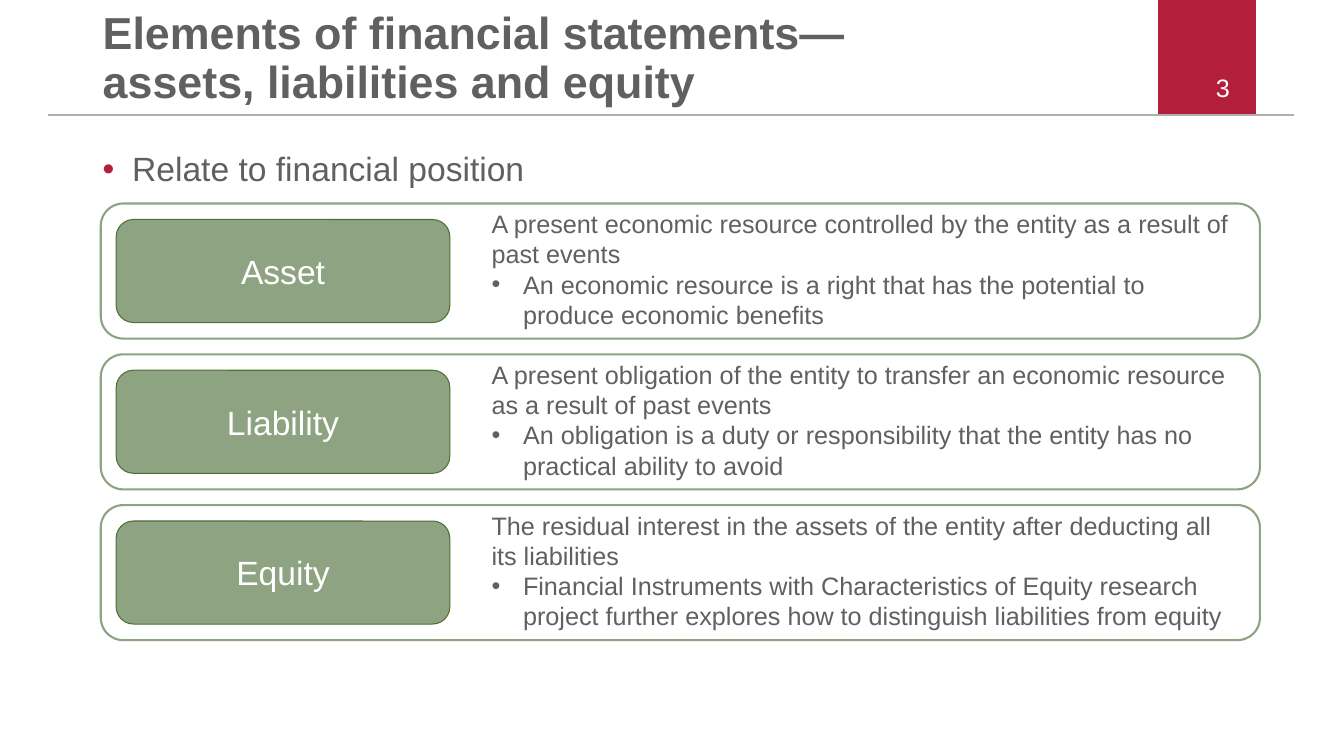
from dataclasses import dataclass

import pptx
import pptx.dml.color
import pptx.enum.shapes
import pptx.enum.text
import pptx.oxml.ns
import pptx.util
from lxml import etree

Pt = pptx.util.Pt
Align = pptx.enum.text.PP_ALIGN
Anchor = pptx.enum.text.MSO_ANCHOR
Preset = pptx.enum.shapes.MSO_SHAPE
qn = pptx.oxml.ns.qn

FONT = "Arial"
GREY, RED, WHITE = "5F6062", "B31E3B", "FFFFFF"
GREEN, DARK_GREEN, RULE_GREY = "8DA381", "4F7032", "AFAFB0"
ROW_TOP, ROW_PITCH, ROW_HEIGHT = 145.4, 107.7, 96.5


@dataclass
class Box:
    left: float
    top: float
    width: float
    height: float

    def lengths(self):
        return [Pt(v) for v in (self.left, self.top, self.width, self.height)]


@dataclass
class Element:
    name: str
    definition: str
    detail: str
    text_width: float = 550


ELEMENTS = [
    Element("Asset",
            "A present economic resource controlled by the entity as a result of past events",
            "An economic resource is a right that has the potential to produce economic benefits"),
    Element("Liability",
            "A present obligation of the entity to transfer an economic resource "
            "as a result of past events",
            "An obligation is a duty or responsibility that the entity has no "
            "practical ability to avoid",
            544.5),
    Element("Equity",
            "The residual interest in the assets of the entity after deducting all its liabilities",
            "Financial Instruments with Characteristics of Equity research project "
            "further explores how to distinguish liabilities from equity"),
]


def color(value: str):
    return pptx.dml.color.RGBColor.from_string(value)


def add_run(p, text: str, size: float, hue: str, bold: bool = False):
    r = p.add_run()
    r.text = text
    r.font.name = FONT
    r.font.size = Pt(size)
    r.font.bold = bold
    r.font.color.rgb = color(hue)


def set_bullet(p, indent: float, hue: str):
    pPr = p._p.get_or_add_pPr()
    pPr.set("marL", str(Pt(indent)))
    pPr.set("indent", str(-Pt(indent)))
    bu_clr = etree.SubElement(pPr, qn("a:buClr"))
    etree.SubElement(bu_clr, qn("a:srgbClr"), val=hue)
    etree.SubElement(pPr, qn("a:buFont"), typeface=FONT)
    etree.SubElement(pPr, qn("a:buChar"), char="•")


def add_text(s, box: Box, anchor=Anchor.TOP, inset: bool = True):
    tf = s.shapes.add_textbox(*box.lengths()).text_frame
    tf.word_wrap = True
    tf.vertical_anchor = anchor
    if not inset:
        tf.margin_left = tf.margin_top = tf.margin_right = tf.margin_bottom = 0
    return tf


def add_panel(s, preset, box: Box, fill: str | None, line: str | None, weight: float = 0):
    """Add a flat shape; None leaves out the fill or the line."""
    sp = s.shapes.add_shape(preset, *box.lengths())
    sp.shadow.inherit = False
    if fill:
        sp.fill.solid()
        sp.fill.fore_color.rgb = color(fill)
    else:
        sp.fill.background()
    if line:
        sp.line.color.rgb = color(line)
        sp.line.width = Pt(weight)
    else:
        sp.line.fill.background()
    return sp


def add_header(s):
    add_panel(s, Preset.RECTANGLE, Box(827.3, 0, 69.8, 82), RED, None)
    rule = s.shapes.add_connector(pptx.enum.shapes.MSO_CONNECTOR.STRAIGHT,
                                  Pt(34.6), Pt(82), Pt(924.5), Pt(82))
    rule.line.color.rgb = color(RULE_GREY)
    rule.line.width = Pt(1.2)
    etree.SubElement(rule._element.spPr, qn("a:effectLst"))

    p = add_text(s, Box(661.7, 48.2, 223.9, 28.8), Anchor.MIDDLE).paragraphs[0]
    p.alignment = Align.RIGHT
    add_run(p, "3", 18, WHITE)

    p = add_text(s, Box(73.4, 0, 711.4, 77), Anchor.BOTTOM, inset=False).paragraphs[0]
    p.line_spacing = 0.9
    add_run(p, "Elements of financial statements—", 32, GREY, bold=True)
    p.add_line_break()
    add_run(p, "assets, liabilities and equity", 32, GREY, bold=True)


def add_element(s, element: Element, top: float):
    add_panel(s, Preset.ROUNDED_RECTANGLE, Box(72, top, 828, ROW_HEIGHT), None, GREEN, 1.5)

    sp = add_panel(s, Preset.ROUNDED_RECTANGLE, Box(83, top + 11.4, 238.3, 73.6),
                   GREEN, DARK_GREEN, 0.75)
    tf = sp.text_frame
    tf.vertical_anchor = Anchor.MIDDLE
    p = tf.paragraphs[0]
    p.alignment = Align.CENTER
    add_run(p, element.name, 24, WHITE)

    tf = add_text(s, Box(344, top, element.text_width, 94.5))
    add_run(tf.paragraphs[0], element.definition, 18, GREY)
    p = tf.add_paragraph()
    set_bullet(p, 22.5, GREY)
    add_run(p, element.detail, 18, GREY)


def main():
    prs = pptx.Presentation()
    prs.slide_width, prs.slide_height = Pt(960), Pt(540)
    s = prs.slides.add_slide(prs.slide_layouts[6])

    add_header(s)
    p = add_text(s, Box(73.4, 106, 823.7, 434), inset=False).paragraphs[0]
    set_bullet(p, 21, RED)
    add_run(p, "Relate to financial position", 24, GREY)
    for i, element in enumerate(ELEMENTS):
        add_element(s, element, ROW_TOP + i * ROW_PITCH)

    prs.save("out.pptx")


if __name__ == "__main__":
    main()
